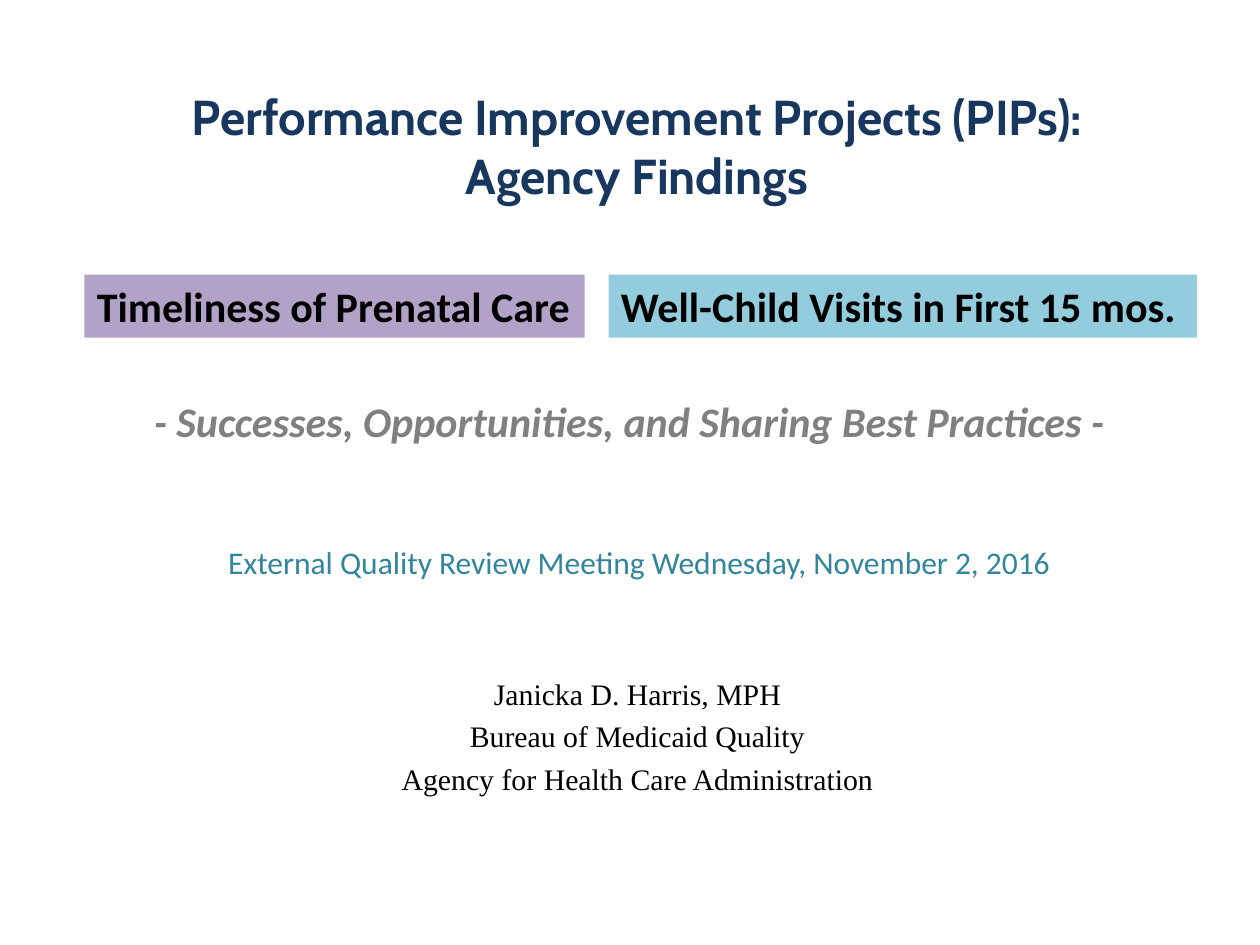
from pptx import Presentation
from pptx.dml.color import RGBColor
from pptx.enum.shapes import MSO_SHAPE
from pptx.enum.text import MSO_ANCHOR, PP_ALIGN
from pptx.util import Inches, Pt

NAVY = RGBColor(0x17, 0x37, 0x5E)
BLACK = RGBColor(0x00, 0x00, 0x00)
GRAY = RGBColor(0x80, 0x80, 0x80)
TEAL = RGBColor(0x31, 0x85, 0x9C)
PURPLE = RGBColor(0xB3, 0xA2, 0xC7)
AQUA = RGBColor(0x93, 0xCD, 0xDD)

TITLE = {"name": "Cabin", "size": Pt(28), "bold": True}
PRESENTER = {"name": "Times New Roman", "size": Pt(17)}
TOPIC = {"name": "Calibri", "size": Pt(24), "bold": True}
TAGLINE = {**TOPIC, "italic": True}
MEETING = {"name": "Calibri", "size": Pt(18)}


class SlideBuilder:
    def __init__(self, deck):
        self.slide = deck.slides.add_slide(deck.slide_layouts[6])

    def fill_text(self, shape, lines, style, color, align, anchor=MSO_ANCHOR.TOP, gap=0):
        """Fill a shape with one paragraph per line; gap is the space between them."""
        frame = shape.text_frame
        frame.word_wrap = True
        frame.vertical_anchor = anchor
        for index, line in enumerate(lines):
            para = frame.add_paragraph() if index else frame.paragraphs[0]
            para.text = line
            para.alignment = align
            if index:
                para.space_before = Pt(gap)
            for span in para.runs:
                for key, value in style.items():
                    setattr(span.font, key, value)
                span.font.color.rgb = color

    def text(self, place, lines, style, color, **layout):
        box = self.slide.shapes.add_textbox(*map(Inches, place))
        self.fill_text(box, lines, style, color, PP_ALIGN.CENTER, **layout)

    def banner(self, place, line, fill):
        box = self.slide.shapes.add_shape(MSO_SHAPE.RECTANGLE, *map(Inches, place))
        box.shadow.inherit = False
        box.fill.solid()
        box.fill.fore_color.rgb = fill
        box.line.fill.background()
        self.fill_text(box, [line], TOPIC, BLACK, PP_ALIGN.LEFT)


def main():
    deck = Presentation()
    deck.slide_width = Inches(10)
    deck.slide_height = Inches(7.5)
    page = SlideBuilder(deck)

    page.text((0.14, 0.53, 9.83, 1.25),
              ["Performance Improvement Projects (PIPs):\vAgency Findings"],
              TITLE, NAVY, anchor=MSO_ANCHOR.MIDDLE)
    page.text((1.56, 5.31, 7, 1.25),
              ["Janicka D. Harris, MPH", "Bureau of Medicaid Quality",
               "Agency for Health Care Administration"],
              PRESENTER, BLACK, gap=4)
    page.banner((0.67, 2.18, 3.97, 0.5), "Timeliness of Prenatal Care", PURPLE)
    page.banner((4.83, 2.18, 4.67, 0.5), "Well-Child Visits in First 15 mos.", AQUA)
    page.text((1.59, 4.26, 6.97, 0.4),
              ["External Quality Review Meeting Wednesday, November 2, 2016"],
              MEETING, TEAL)
    page.text((1.08, 3.09, 7.83, 0.5),
              ["- Successes, Opportunities, and Sharing Best Practices -"],
              TAGLINE, GRAY)

    deck.save("out.pptx")


if __name__ == "__main__":
    main()
